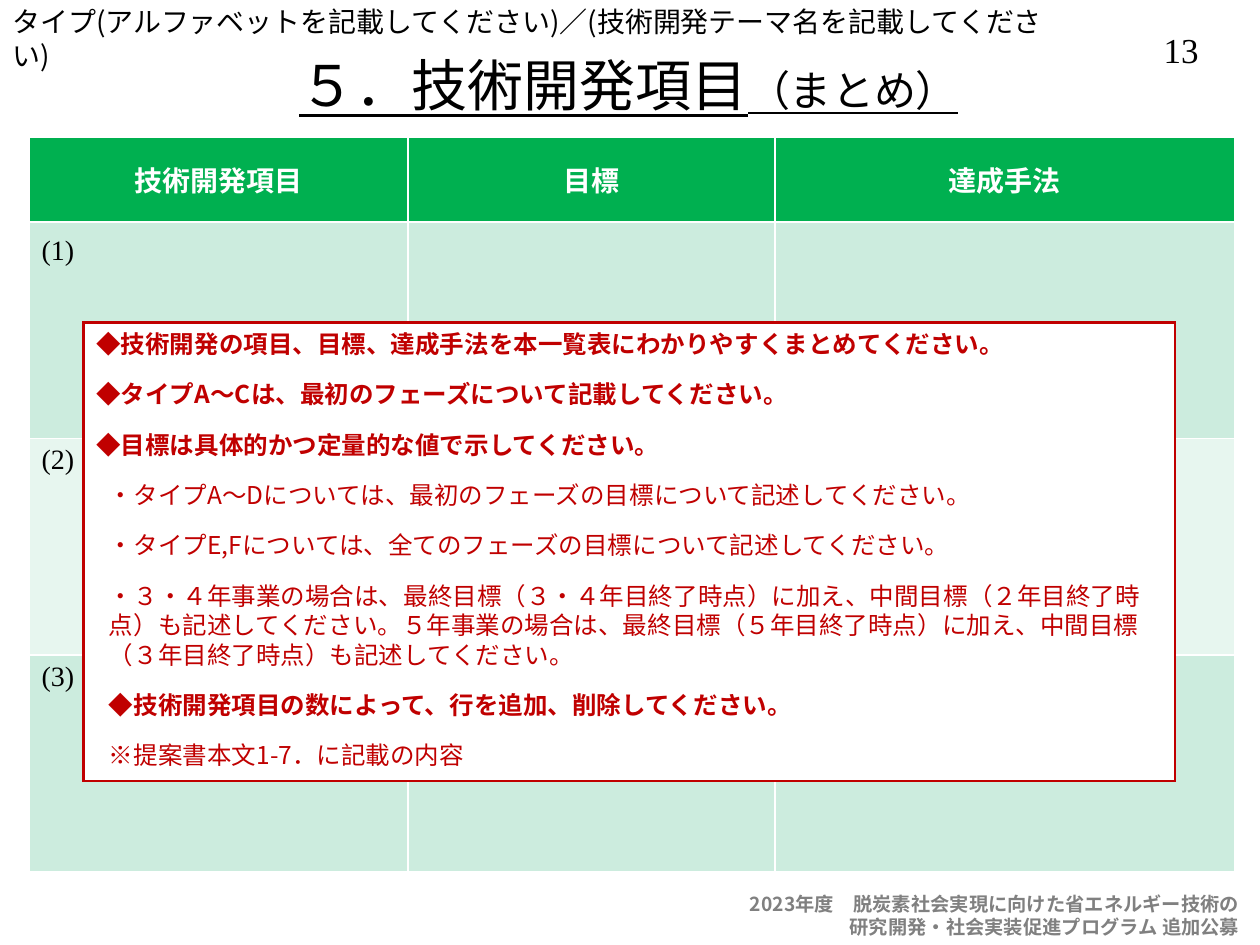
import pptx
import pptx.dml.color
import pptx.enum.text
import pptx.oxml
import pptx.oxml.ns
import pptx.util

WIDE, HIGH = 10, 7.5
COLS, ROWS = 100, 75
SANS, SERIF = "Noto Sans CJK JP", "Times New Roman"
ALIGN = pptx.enum.text.PP_ALIGN
MID = pptx.enum.text.MSO_ANCHOR.MIDDLE
TOP = pptx.enum.text.MSO_ANCHOR.TOP
FIXED = pptx.enum.text.MSO_AUTO_SIZE.NONE
RED, GREEN, WHITE, BLACK = "C00000", "00B050", "FFFFFF", "000000"
HEADS = ["技術開発項目", "目標", "達成手法"]
MARKS = ["(1)　", "(2)", "(3)"]
NOTES = [
    ("◆技術開発の項目、目標、達成手法を本一覧表にわかりやすくまとめてください。", True, 0),
    ("◆タイプA～Cは、最初のフェーズについて記載してください。", True, 0),
    ("◆目標は具体的かつ定量的な値で示してください。", True, 0),
    ("・タイプA～Dについては、最初のフェーズの目標について記述してください。", False, 0.1),
    ("・タイプE,Fについては、全てのフェーズの目標について記述してください。", False, 0.1),
    ("・３・４年事業の場合は、最終目標（３・４年目終了時点）に加え、中間目標（２年目終了時点）"
     "も記述してください。５年事業の場合は、最終目標（５年目終了時点）に加え、中間目標"
     "（３年目終了時点）も記述してください。", False, 0.1),
    ("◆技術開発項目の数によって、行を追加、削除してください。", True, 0.1),
    ("※提案書本文1-7．に記載の内容", False, 0.1),
]


def tint(code):
    """Turn a hex string into a colour."""
    return pptx.dml.color.RGBColor.from_string(code)


def apply(item, form):
    """Set each value of a dict on an object."""
    for key, value in form.items():
        setattr(item, key, value)


def grid(box):
    """Turn columns and rows of the grid into left, top, width and height."""
    steps = (WIDE / COLS, HIGH / ROWS) * 2
    return [pptx.util.Inches(part * step) for part, step in zip(box, steps)]


def place(shape, box):
    """Move a shape into a box."""
    apply(shape, dict(zip(("left", "top", "width", "height"), grid(box))))


def write(para, text, size, ink, face=SANS, **form):
    """Add a run of text with its font."""
    run = para.add_run()
    run.text = text
    apply(run.font, {"size": pptx.util.Pt(size), "name": face, **form})
    run.font.color.rgb = tint(ink)
    east = pptx.oxml.parse_xml(f'<a:ea {pptx.oxml.ns.nsdecls("a")} typeface="{SANS}"/>')
    run.font._element.find(pptx.oxml.ns.qn("a:latin")).addnext(east)


def label(slide, box, lines, size, ink, align=ALIGN.LEFT, wrap=True, face=SANS, **form):
    """Add a text box with one paragraph a line."""
    frame = slide.shapes.add_textbox(*grid(box)).text_frame
    frame.word_wrap = wrap
    for row, line in enumerate(lines):
        para = frame.add_paragraph() if row else frame.paragraphs[0]
        para.alignment = align
        write(para, line, size, ink, face, **form)
    return frame


def title(slide, box):
    """Fill the title with its large and small parts."""
    head = slide.shapes.title
    place(head, box)
    apply(head.text_frame, {"vertical_anchor": MID, "word_wrap": True, "auto_size": FIXED})
    para = head.text_frame.paragraphs[0]
    para.alignment = ALIGN.CENTER
    for text, size in (("５．技術開発項目", 32), ("（まとめ）", 24)):
        write(para, text, size, BLACK, underline=True)


def edge(cell, widths):
    """Draw white borders left, right, top and bottom of a cell."""
    props = cell._tc.get_or_add_tcPr()
    for spot, (side, width) in enumerate(zip("LRTB", widths)):
        props.insert(spot, pptx.oxml.parse_xml(
            f'<a:ln{side} {pptx.oxml.ns.nsdecls("a")} w="{pptx.util.Pt(width)}">'
            f'<a:solidFill><a:srgbClr val="{WHITE}"/></a:solidFill></a:ln{side}>'))


def chart(slide, box):
    """Add the table of items, goals and methods."""
    rows = [HEADS] + [[mark, "", ""] for mark in MARKS]
    fills = [GREEN, "CCECDE", "E7F6EF", "CCECDE"]
    tops, ends = [3, 1.5, 1, 1], [1.5, 1, 1, 1]
    table = slide.shapes.add_table(len(rows), len(HEADS), *grid(box)).table
    for col, width in zip(table.columns, (3.01, 2.91, 3.65)):
        col.width = pptx.util.Inches(width)
    for row, high in zip(table.rows, (0.68, 1.72, 1.72, 1.72)):
        row.height = pptx.util.Inches(high)
    for r, texts in enumerate(rows):
        for c, text in enumerate(texts):
            cell = table.cell(r, c)
            cell.fill.solid()
            cell.fill.fore_color.rgb = tint(fills[r])
            cell.vertical_anchor = TOP if r else MID
            edge(cell, (1, 1, tops[r], ends[r]))
            para = cell.text_frame.paragraphs[0]
            para.alignment = ALIGN.LEFT if r else ALIGN.CENTER
            if text:
                write(para, text, 16, BLACK if r else WHITE, SERIF, bold=not r)


def guide(slide, box):
    """Fill the framed list of notes and bring it to the front."""
    body = slide.placeholders[1]
    place(body, box)
    slide.shapes._spTree.append(body._element)
    body.fill.solid()
    body.fill.fore_color.rgb = tint(WHITE)
    body.line.color.rgb = tint(RED)
    body.line.width = pptx.util.Pt(1.5)
    line = body.line._get_or_add_ln()
    line.append(pptx.oxml.parse_xml(f'<a:miter {pptx.oxml.ns.nsdecls("a")} lim="800000"/>'))
    frame = body.text_frame
    apply(frame, {"vertical_anchor": TOP, "word_wrap": True, "auto_size": FIXED})
    for row, (text, bold, left) in enumerate(NOTES):
        para = frame.add_paragraph() if row else frame.paragraphs[0]
        props = para._p.get_or_add_pPr()
        props.set("marL", str(pptx.util.Inches(left)))
        props.set("indent", "0")
        props.append(pptx.oxml.parse_xml(f'<a:buNone {pptx.oxml.ns.nsdecls("a")}/>'))
        apply(para, {"space_before": pptx.util.Pt(12 if row else 0), "alignment": ALIGN.LEFT})
        write(para, text, 14, RED, bold=bold)


def main():
    """Build the slide and save it."""
    deck = pptx.Presentation()
    apply(deck, {"slide_width": pptx.util.Inches(WIDE), "slide_height": pptx.util.Inches(HIGH)})
    slide = deck.slides.add_slide(deck.slide_layouts[1])
    label(slide, (90.5, 1.8, 6.5, 4.3), ["13"], 20, BLACK, ALIGN.CENTER, False, SERIF)
    label(slide, (0, -0.1, 84, 3.7),
          ["タイプ(アルファベットを記載してください)／(技術開発テーマ名を記載してください)"], 16, BLACK)
    foot = label(slide, (58.3, 70.3, 41.7, 4.7),
                 ["2023年度　脱炭素社会実現に向けた省エネルギー技術の",
                  "研究開発・社会実装促進プログラム 追加公募"], 11, "808080", ALIGN.RIGHT, bold=True)
    apply(foot, {"margin_left": 0, "margin_right": pptx.util.Inches(0.16)})
    title(slide, (7.4, 3.2, 85, 7))
    chart(slide, (2.3, 10.8, 95.7, 58.4))
    guide(slide, (6.65, 25.6, 86.6, 36.4))
    deck.save("out.pptx")


if __name__ == "__main__":
    main()
